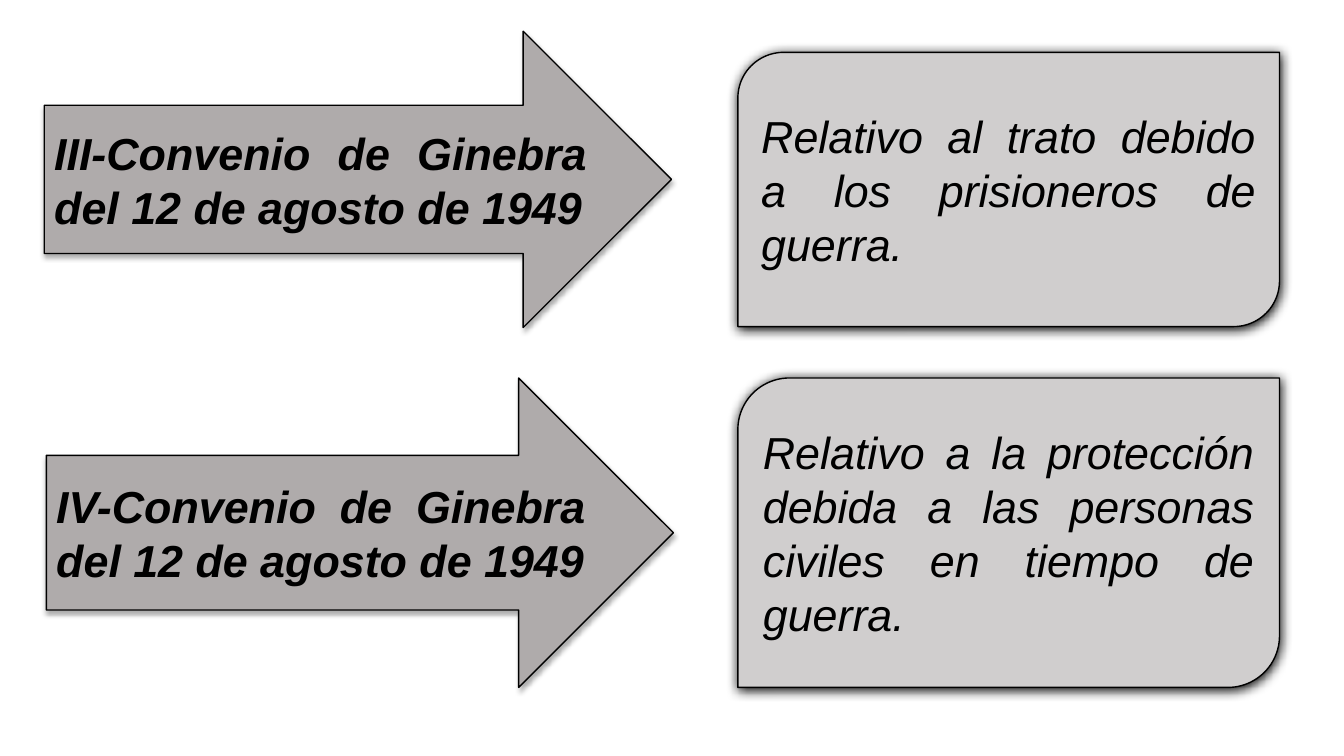
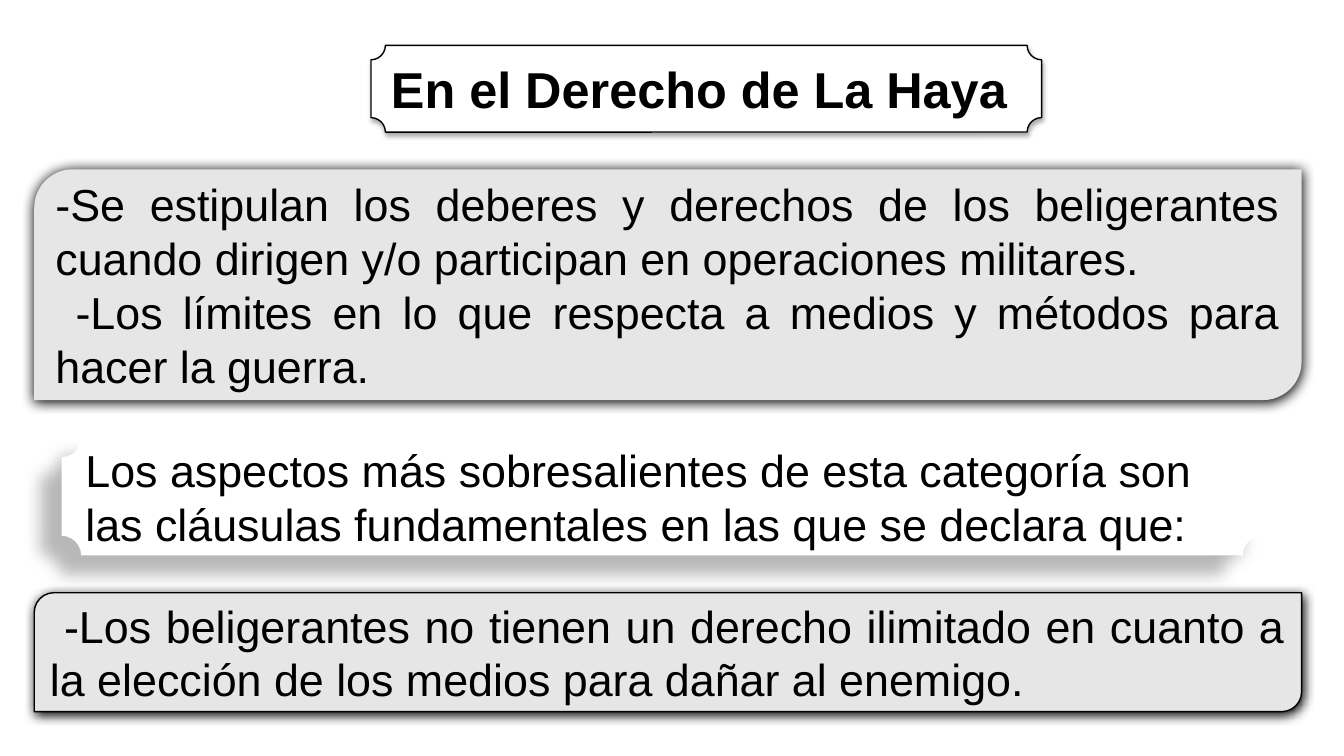
from lxml import etree
from pptx import Presentation
from pptx.dml.color import RGBColor
from pptx.enum.shapes import MSO_SHAPE as SHAPE
from pptx.enum.text import MSO_ANCHOR as ANCHOR, PP_ALIGN as ALIGN
from pptx.oxml.ns import qn
from pptx.util import Emu, Inches, Pt

BLACK = RGBColor(0x00, 0x00, 0x00)
WHITE = RGBColor(0xFF, 0xFF, 0xFF)
ARROW_GREY = RGBColor(0xAF, 0xAB, 0xAB)
PANEL_GREY = RGBColor(0xD0, 0xCE, 0xCE)
LIGHT_GREY = RGBColor(0xE7, 0xE6, 0xE6)

FONT = "Arial"
BODY_SIZE = 32
TITLE_SIZE = 36

# Shadows: opacity in percent, blur and distance in points, angle in degrees
SOFT = (32, 3.5, 2.2, 90)
HALO = (100, 8.5, 1, 90)
SLANTED = (28, 11.8, 19.7, 141)

deck = Presentation()
deck.slide_width, deck.slide_height = Inches(13.33), Inches(7.5)
BLANK = deck.slide_layouts[6]
COL = deck.slide_width / 100
ROW = deck.slide_height / 100


def cast_shadow(shape, opacity, blur, distance, angle):
    shape.shadow.inherit = False
    effects = shape._element.spPr.find(qn("a:effectLst"))
    outer = etree.SubElement(
        effects, qn("a:outerShdw"), blurRad=str(Pt(blur)), dist=str(Pt(distance)),
        dir=str(angle * 60000), algn="ctr", rotWithShape="0")
    color = etree.SubElement(outer, qn("a:srgbClr"), val=str(BLACK))
    etree.SubElement(color, qn("a:alpha"), val=str(opacity * 1000))


def add_panel(slide, kind, place, fill, shadow, paragraphs, outlined=True,
              align=ALIGN.JUSTIFY, size=BODY_SIZE, bold=False, italic=False):
    """Place is in hundredths of the slide; paragraphs are (text, first-line inches)."""
    left, top, width, height = place
    panel = slide.shapes.add_shape(
        kind, Emu(round(left * COL)), Emu(round(top * ROW)),
        Emu(round(width * COL)), Emu(round(height * ROW)))
    panel.fill.solid()
    panel.fill.fore_color.rgb = fill
    if outlined:
        panel.line.color.rgb = BLACK
        panel.line.width = Pt(1)
    else:
        panel.line.fill.background()
    cast_shadow(panel, *shadow)

    frame = panel.text_frame
    frame.word_wrap = True
    frame.vertical_anchor = ANCHOR.MIDDLE
    for number, (text, first_line) in enumerate(paragraphs):
        paragraph = frame.add_paragraph() if number else frame.paragraphs[0]
        paragraph.text = text
        paragraph.alignment = align
        if first_line:
            paragraph._p.get_or_add_pPr().set("indent", str(Inches(first_line)))
        font = paragraph.font
        font.name, font.size = FONT, Pt(size)
        font.bold, font.italic = bold, italic
        font.color.rgb = BLACK
    return panel


# Slide 1: each convention points to its subject
conventions = [
    ("III-Convenio de Ginebra del 12 de agosto de 1949", (3.3, 4.13, 46.66, 39.2),
     "Relativo al trato debido a los prisioneros de guerra.",
     (54.9, 6.93, 40.3, 36.27)),
    ("IV-Convenio de Ginebra del 12 de agosto de 1949", (3.45, 50, 46.66, 40.93),
     "Relativo a la protección debida a las personas civiles en tiempo de guerra.",
     (54.9, 50, 40.3, 40.93)),
]
geneva = deck.slides.add_slide(BLANK)
for convention, arrow_place, subject, subject_place in conventions:
    add_panel(geneva, SHAPE.RIGHT_ARROW, arrow_place, ARROW_GREY, SOFT,
              [(convention, 0)], bold=True, italic=True)
    add_panel(geneva, SHAPE.ROUND_2_DIAG_RECTANGLE, subject_place, PANEL_GREY, HALO,
              [(subject, 0)], italic=True)

# Slide 2: the law of The Hague
hague = deck.slides.add_slide(BLANK)
title = add_panel(hague, SHAPE.PLAQUE, (27.6, 6, 49.9, 11.47), WHITE, SOFT,
                  [("En el Derecho de La Haya", 0)],
                  align=ALIGN.CENTER, size=TITLE_SIZE, bold=True)
# Uneven margins set the title slightly left of centre, on one line
title.text_frame.margin_left = 0
title.text_frame.margin_right = Inches(0.14)

add_panel(hague, SHAPE.ROUND_2_DIAG_RECTANGLE, (2.55, 22.4, 94.3, 30.53), LIGHT_GREY, HALO,
          [("-Se estipulan los deberes y derechos de los beligerantes cuando dirigen "
            "y/o participan en operaciones militares.", 0),
           ("-Los límites en lo que respecta a medios y métodos para hacer la guerra.", 0.2)],
          outlined=False)
add_panel(hague, SHAPE.PLAQUE, (4.58, 57.87, 89.35, 15.6), WHITE, SLANTED,
          [("Los aspectos más sobresalientes de esta categoría son las cláusulas "
            "fundamentales en las que se declara que:", 0)],
          outlined=False, align=ALIGN.LEFT)
add_panel(hague, SHAPE.ROUND_2_DIAG_RECTANGLE, (2.55, 78.4, 94.3, 15.73), LIGHT_GREY, HALO,
          [("-Los beligerantes no tienen un derecho ilimitado en cuanto a la elección "
            "de los medios para dañar al enemigo.", 0.14)])

deck.save("out.pptx")
